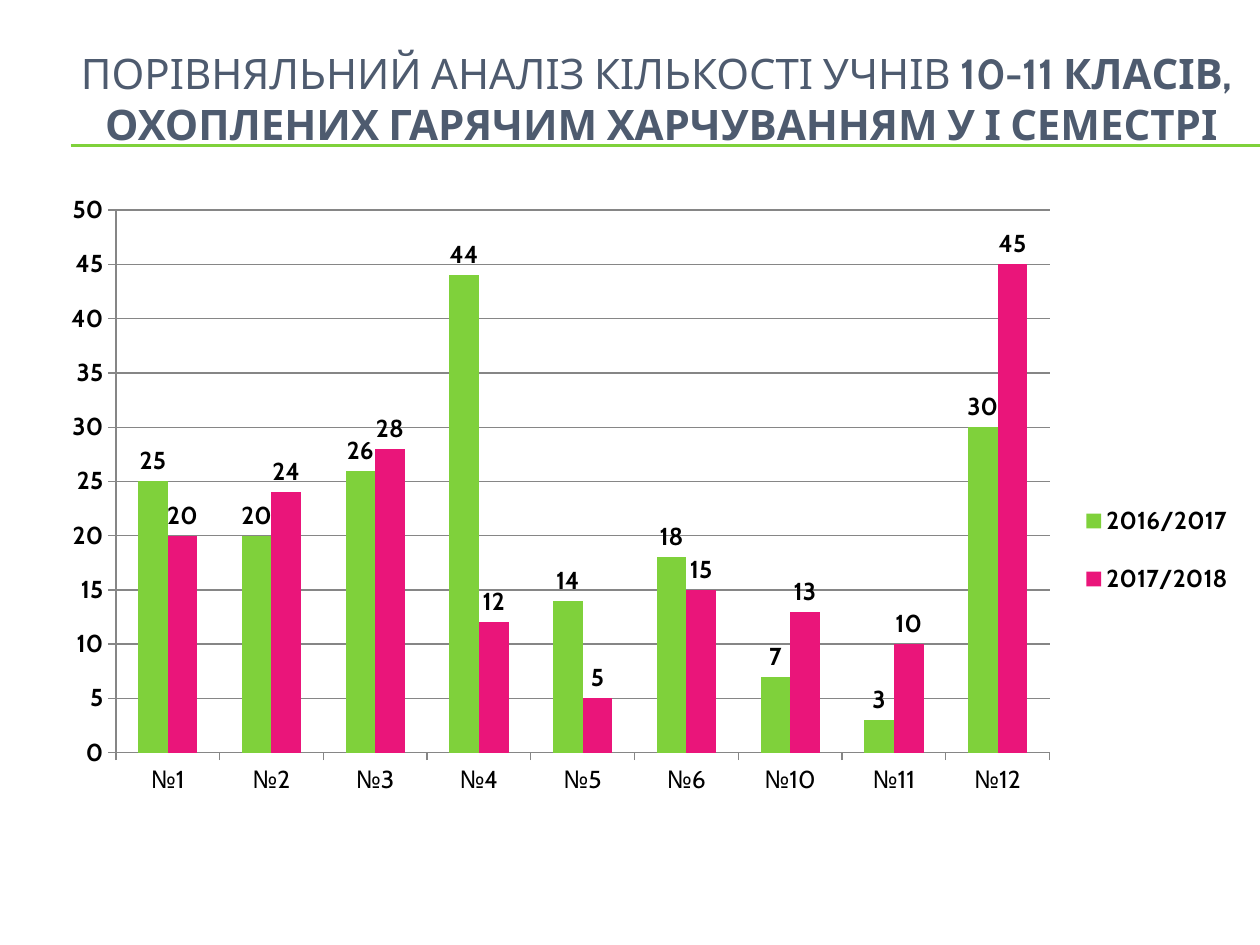
import pptx
import pptx.chart.data
import pptx.dml.color
import pptx.enum.chart
import pptx.enum.shapes
import pptx.enum.text
import pptx.oxml
import pptx.oxml.ns
import pptx.util
from pptx.util import Inches

FONT = "Cabin"
GREEN, PINK, SLATE, GREY, BLACK = "7FD13B", "EA157A", "4E5B6F", "868686", "000000"
TITLE = [
    ("ПОРІВНЯЛЬНИЙ АНАЛІЗ КІЛЬКОСТІ УЧНІВ ", False),
    ("10-11 КЛАСІВ, \vОХОПЛЕНИХ ГАРЯЧИМ ХАРЧУВАННЯМ У І СЕМЕСТРІ", True),
]
SCHOOLS = ["№1", "№2", "№3", "№4", "№5", "№6", "№10", "№11", "№12"]
YEARS = [
    ("2016/2017", GREEN, [25, 20, 26, 44, 14, 18, 7, 3, 30]),
    ("2017/2018", PINK, [20, 24, 28, 12, 5, 15, 13, 10, 45]),
]
RULES_Y = [1.15, 1.16]
TITLE_BOX = (0.5, 0.52, 9.5, 0.92)
CHART_BOX = (0.35, 1.47, 9.5, 4.95)
# Fractions of the chart: left, top, width, height
PLOT_AREA = (0.06, 0.04, 0.78, 0.87)
LEGEND_AREA = (0.86, 0.47, 0.14, 0.23)


def rgb(value):
    return pptx.dml.color.RGBColor.from_string(value)


def set_font(font, size, color, bold=False):
    values = {"name": FONT, "size": pptx.util.Pt(size), "bold": bold}
    for name, value in values.items():
        setattr(font, name, value)
    font.color.rgb = rgb(color)


def set_line(line, color):
    line.color.rgb = rgb(color)
    line.width = pptx.util.Pt(0.75)


def manual_layout(area, inner=False):
    """Return a c:layout element that fixes a chart part in place."""
    target = '<c:layoutTarget val="inner"/>' if inner else ""
    modes = "".join(f'<c:{n}Mode val="edge"/>' for n in "xy")
    sizes = "".join(f'<c:{n} val="{v}"/>' for n, v in zip("xywh", area))
    ns = pptx.oxml.ns.nsdecls("c")
    return pptx.oxml.parse_xml(
        f"<c:layout {ns}><c:manualLayout>{target}{modes}{sizes}"
        "</c:manualLayout></c:layout>")


def place(parent, layout, after=None):
    for old in parent.findall(pptx.oxml.ns.qn("c:layout")):
        parent.remove(old)
    if after is None:
        parent.insert(0, layout)
    else:
        parent.find(pptx.oxml.ns.qn(after)).addnext(layout)


def add_rules(s):
    for y in RULES_Y:
        rule = s.shapes.add_connector(
            pptx.enum.shapes.MSO_CONNECTOR.STRAIGHT,
            Inches(0.56), Inches(y), Inches(10), Inches(y))
        set_line(rule.line, GREEN)
        rule._element.spPr.append(pptx.oxml.parse_xml(
            f'<a:effectLst {pptx.oxml.ns.nsdecls("a")}/>'))


def fill_title(s):
    title = s.shapes.title
    for name, value in zip(("left", "top", "width", "height"), TITLE_BOX):
        setattr(title, name, Inches(value))
    tf = title.text_frame
    frame = {
        "word_wrap": True,
        "auto_size": pptx.enum.text.MSO_AUTO_SIZE.NONE,
        "vertical_anchor": pptx.enum.text.MSO_ANCHOR.MIDDLE,
        "margin_top": 0,
        "margin_bottom": Inches(0.4),
    }
    for name, value in frame.items():
        setattr(tf, name, value)
    p = tf.paragraphs[0]
    p.alignment = pptx.enum.text.PP_ALIGN.CENTER
    for text, bold in TITLE:
        for i, line in enumerate(text.split("\v")):
            if i:
                p.add_line_break()
            r = p.add_run()
            r.text = line
            set_font(r.font, 24, SLATE, bold)


def add_chart(s):
    data = pptx.chart.data.CategoryChartData(number_format="0")
    data.categories = SCHOOLS
    for name, _, values in YEARS:
        data.add_series(name, values)
    chart = s.shapes.add_chart(
        pptx.enum.chart.XL_CHART_TYPE.COLUMN_CLUSTERED,
        *map(Inches, CHART_BOX), data).chart
    chart.has_title = False
    set_font(chart.font, 14, BLACK)

    plot = chart.plots[0]
    for name, value in {"gap_width": 150, "overlap": 0,
                        "vary_by_categories": False}.items():
        setattr(plot, name, value)
    for series, (_, color, _) in zip(plot.series, YEARS):
        series.format.fill.solid()
        series.format.fill.fore_color.rgb = rgb(color)
        labels = series.data_labels
        label_format = {
            "show_value": True,
            "number_format": "0",
            "number_format_is_linked": False,
            "position": pptx.enum.chart.XL_LABEL_POSITION.OUTSIDE_END,
        }
        for name, value in label_format.items():
            setattr(labels, name, value)
        set_font(labels.font, 14, BLACK, True)

    for axis, bold in ((chart.category_axis, False), (chart.value_axis, True)):
        axis.major_tick_mark = pptx.enum.chart.XL_TICK_MARK.OUTSIDE
        set_font(axis.tick_labels.font, 14, BLACK, bold)
        set_line(axis.format.line, GREY)
    for name, value in {"minimum_scale": 0, "maximum_scale": 50, "major_unit": 5,
                        "has_major_gridlines": True}.items():
        setattr(chart.value_axis, name, value)
    set_line(chart.value_axis.major_gridlines.format.line, GREY)

    chart.has_legend = True
    legend = chart.legend
    legend.position = pptx.enum.chart.XL_LEGEND_POSITION.RIGHT
    legend.include_in_layout = False
    set_font(legend.font, 14, BLACK, True)
    plot_area = chart._chartSpace.chart.plotArea
    place(plot_area, manual_layout(PLOT_AREA, inner=True))
    place(legend._element, manual_layout(LEGEND_AREA), after="c:legendPos")


def main():
    prs = pptx.Presentation()
    prs.slide_width, prs.slide_height = Inches(10), Inches(7.5)
    s = prs.slides.add_slide(prs.slide_layouts.get_by_name("Title Only"))
    add_rules(s)
    fill_title(s)
    add_chart(s)
    prs.save("out.pptx")


if __name__ == "__main__":
    main()
